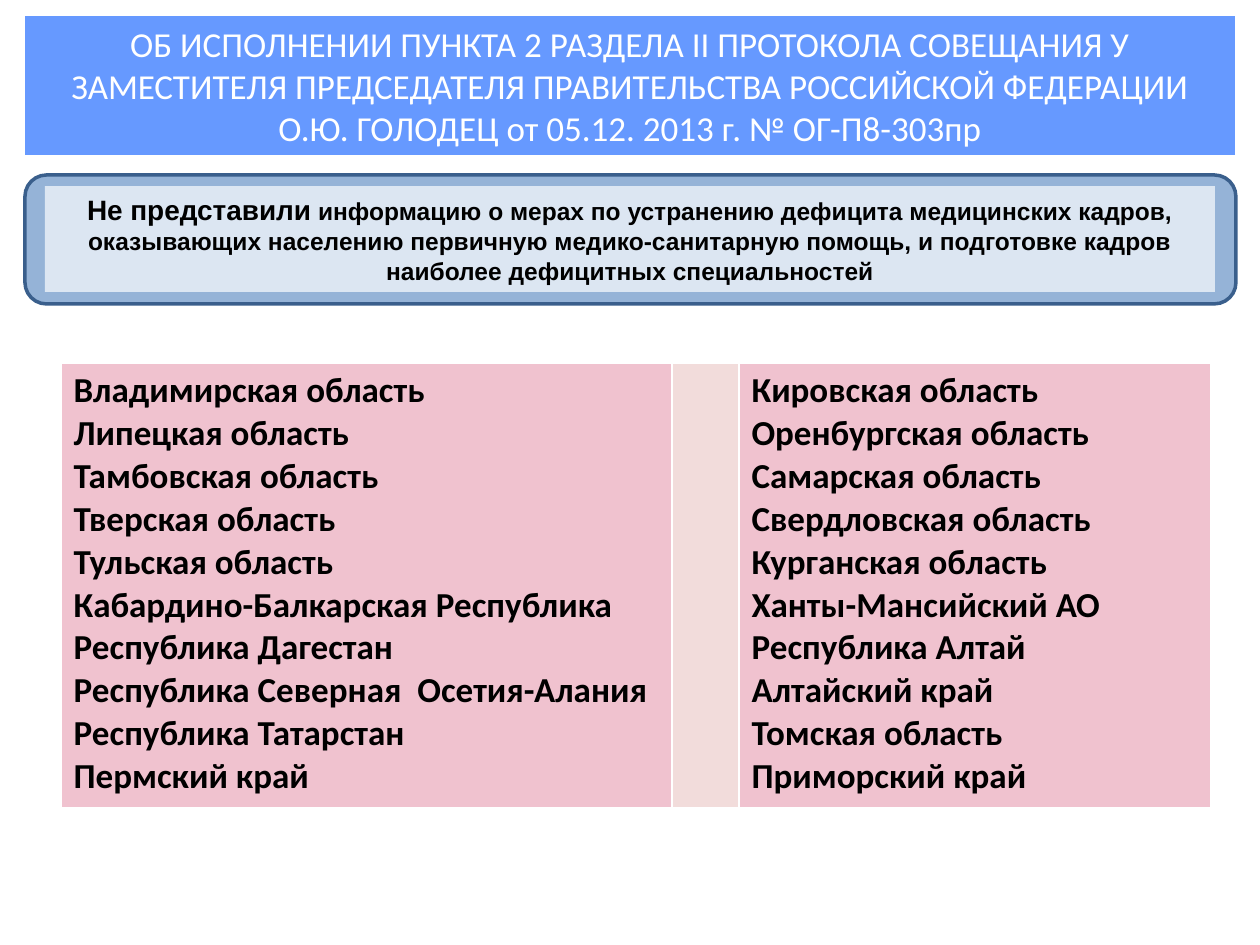
from lxml.etree import SubElement
from pptx import Presentation
from pptx.dml.color import RGBColor
from pptx.enum.shapes import MSO_SHAPE
from pptx.enum.text import MSO_ANCHOR, MSO_AUTO_SIZE, PP_ALIGN
from pptx.oxml.ns import qn
from pptx.util import Emu, Pt

PX_PER_INCH = 126
WHITE = RGBColor(0xFF, 0xFF, 0xFF)
BLACK = RGBColor(0x00, 0x00, 0x00)
BLUE = RGBColor(0x66, 0x99, 0xFF)
FRAME_FILL = RGBColor(0x95, 0xB3, 0xD7)
FRAME_LINE = RGBColor(0x3A, 0x5F, 0x8C)
PALE_BLUE = RGBColor(0xDC, 0xE6, 0xF2)
PINK = RGBColor(0xF0, 0xC2, 0xCF)
PALE_PINK = RGBColor(0xF2, 0xDC, 0xDB)

TITLE_FONT = {"name": "Calibri", "size": Pt(20), "bold": False}
LEAD_FONT = {"name": "Arial", "size": Pt(16), "bold": True}
NOTE_FONT = {**LEAD_FONT, "size": Pt(14)}
REGION_FONT = {"name": "Calibri", "size": Pt(20), "bold": True}
BORDERS = {"a:lnL": 1, "a:lnR": 1, "a:lnT": 1, "a:lnB": 3}

TITLE = ("ОБ ИСПОЛНЕНИИ ПУНКТА 2 РАЗДЕЛА II ПРОТОКОЛА СОВЕЩАНИЯ У "
         "ЗАМЕСТИТЕЛЯ ПРЕДСЕДАТЕЛЯ ПРАВИТЕЛЬСТВА РОССИЙСКОЙ ФЕДЕРАЦИИ "
         "О.Ю. ГОЛОДЕЦ от 05.12. 2013 г. № ОГ-П8-303пр")
LEAD = "Не представили"
NOTE = (" информацию о мерах по устранению дефицита медицинских кадров, "
        "оказывающих населению первичную медико-санитарную помощь, "
        "и подготовке кадров наиболее дефицитных специальностей")
LEFT_REGIONS = [
    "Владимирская область", "Липецкая область", "Тамбовская область",
    "Тверская область", "Тульская область", "Кабардино-Балкарская Республика",
    "Республика Дагестан", "Республика Северная  Осетия-Алания",
    "Республика Татарстан", "Пермский край",
]
RIGHT_REGIONS = [
    "Кировская область", "Оренбургская область", "Самарская область",
    "Свердловская область", "Курганская область", "Ханты-Мансийский АО",
    "Республика Алтай", "Алтайский край", "Томская область",
    "Приморский край",
]


def px(n):
    return Emu(round(n * 914400 / PX_PER_INCH))


class Deck:
    def __init__(self, prs):
        self.s = prs.slides.add_slide(prs.slide_layouts[5])

    def run(self, p, text, font, color):
        r = p.add_run()
        r.text = text
        for key, value in font.items():
            setattr(r.font, key, value)
        r.font.color.rgb = color

    def center(self, tf, runs, color):
        settings = {"word_wrap": True, "auto_size": MSO_AUTO_SIZE.NONE,
                    "vertical_anchor": MSO_ANCHOR.MIDDLE}
        for key, value in settings.items():
            setattr(tf, key, value)
        p = tf.paragraphs[0]
        p.alignment = PP_ALIGN.CENTER
        for text, font in runs:
            self.run(p, text, font, color)

    def title(self, text, box, fill):
        sp = self.s.shapes.title
        sp.left, sp.top, sp.width, sp.height = map(px, box)
        sp.fill.solid()
        sp.fill.fore_color.rgb = fill
        self.center(sp.text_frame, [(text, TITLE_FONT)], WHITE)

    def panel(self, kind, box, fill, line=None, runs=()):
        sp = self.s.shapes.add_shape(kind, *map(px, box))
        sp.shadow.inherit = False
        sp.fill.solid()
        sp.fill.fore_color.rgb = fill
        if line is None:
            sp.line.fill.background()
        else:
            sp.line.color.rgb = line
            sp.line.width = Pt(2)
        if runs:
            self.center(sp.text_frame, runs, BLACK)

    def borders(self, cell):
        tc_pr = cell._tc.get_or_add_tcPr()
        for tag, width in BORDERS.items():
            ln = SubElement(tc_pr, qn(tag), w=str(Pt(width)))
            fill = SubElement(ln, qn("a:solidFill"))
            SubElement(fill, qn("a:srgbClr"), val=str(WHITE))

    def table(self, left, top, height, columns):
        width = sum(w for w, _, _ in columns)
        frame = self.s.shapes.add_table(1, len(columns),
                                        *map(px, (left, top, width, height)))
        table = frame.table
        table.first_row = table.horz_banding = False
        for i, (w, fill, lines) in enumerate(columns):
            table.columns[i].width = px(w)
            cell = table.cell(0, i)
            self.borders(cell)
            cell.fill.solid()
            cell.fill.fore_color.rgb = fill
            tf = cell.text_frame
            for j, text in enumerate(lines):
                p = tf.add_paragraph() if j else tf.paragraphs[0]
                self.run(p, text, REGION_FONT, BLACK)


def main():
    prs = Presentation()
    prs.slide_width, prs.slide_height = px(1260), px(945)
    deck = Deck(prs)

    # Heading band
    deck.title(TITLE, (25, 16, 1210, 139), BLUE)

    # Framed statement
    deck.panel(MSO_SHAPE.ROUNDED_RECTANGLE, (25, 175, 1211, 129),
               FRAME_FILL, FRAME_LINE)
    deck.panel(MSO_SHAPE.RECTANGLE, (45, 186, 1170, 106), PALE_BLUE,
               runs=[(LEAD, LEAD_FONT), (NOTE, NOTE_FONT)])

    # Regions in two columns with a spacer between
    deck.table(61, 363, 446, [(611, PINK, LEFT_REGIONS),
                              (67, PALE_PINK, []),
                              (472, PINK, RIGHT_REGIONS)])

    prs.save("out.pptx")


if __name__ == "__main__":
    main()
